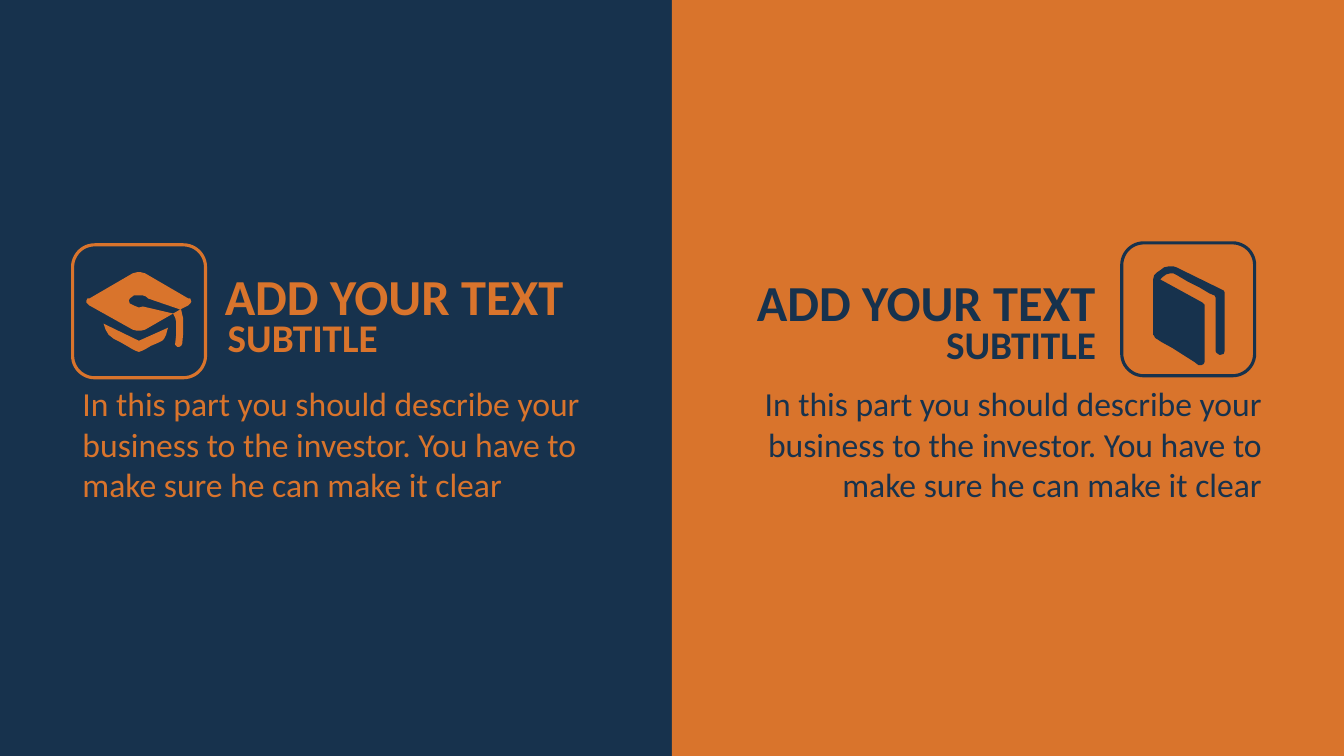
from dataclasses import dataclass

from pptx import Presentation
from pptx.dml.color import RGBColor
from pptx.enum.shapes import MSO_SHAPE
from pptx.enum.text import MSO_ANCHOR, MSO_AUTO_SIZE, PP_ALIGN
from pptx.util import Cm, Pt

RECT, ROUND_RECT = MSO_SHAPE.RECTANGLE, MSO_SHAPE.ROUNDED_RECTANGLE
LEFT, RIGHT = PP_ALIGN.LEFT, PP_ALIGN.RIGHT
TOP, GROW = MSO_ANCHOR.TOP, MSO_AUTO_SIZE.SHAPE_TO_FIT_TEXT

SLIDE_W, SLIDE_H = 33.87, 19.05
BADGE_SIZE = 3.35
ICON_UNIT = Cm(0.0254)  # one step of the icon grid

HEADING, SUBTITLE = "ADD YOUR TEXT", "SUBTITLE"
BODY = ("In this part you should describe your business to the investor. "
        "You have to make sure he can make it clear")

# Icon outlines: one list of grid points per contour
CAP = [
    # Cap band
    [(17, 51), (52, 68), (81, 55), (80, 58), (79, 62), (77, 66), (75, 68),
     (71, 70), (64, 73), (59, 76), (55, 78), (52, 79), (49, 78), (45, 76),
     (40, 73), (33, 69), (27, 66), (22, 62), (19, 57)],
    # Tassel
    [(93, 37), (94, 37), (95, 42), (96, 46), (96, 60), (95, 71), (94, 73),
     (92, 74), (90, 74), (88, 72), (88, 71), (89, 62), (89, 49), (88, 45),
     (86, 41)],
    # Board
    [(54, 0), (58, 1), (101, 26), (103, 26), (104, 29), (103, 31), (101, 33),
     (93, 37), (61, 26), (59, 24), (56, 23), (47, 23), (43, 26), (42, 28),
     (43, 31), (47, 33), (52, 35), (56, 34), (86, 41), (58, 57), (54, 58),
     (50, 58), (46, 57), (3, 33), (1, 31), (0, 30), (0, 28), (1, 26),
     (3, 26), (46, 1), (50, 0)],
]
BOOK = [
    [(20, 0), (23, 1), (70, 24), (71, 26), (71, 84), (70, 87), (66, 88),
     (63, 86), (62, 84), (62, 31), (61, 29), (56, 27), (46, 21), (34, 15),
     (24, 9), (20, 7), (17, 7), (13, 8), (9, 11), (7, 13), (49, 36),
     (51, 38), (51, 95), (50, 97), (48, 98), (45, 98), (41, 95), (30, 88),
     (19, 81), (8, 75), (2, 71), (1, 69), (0, 68), (0, 13), (1, 9),
     (4, 6), (7, 4), (11, 1), (16, 0)],
]


@dataclass(frozen=True)
class Theme:
    navy: RGBColor = RGBColor(0x17, 0x32, 0x4D)
    orange: RGBColor = RGBColor(0xD9, 0x74, 0x2C)
    font: str = "Calibri"
    heading: int = 36
    subtitle: int = 28
    body: int = 24
    outline: float = 2.25


class SlideBuilder:
    def __init__(self, slide, theme):
        self.s = slide
        self.theme = theme

    def panel(self, x, w, color):
        sp = self.s.shapes.add_shape(RECT, Cm(x), Cm(0), Cm(w), Cm(SLIDE_H))
        sp.shadow.inherit = False
        sp.fill.solid()
        sp.fill.fore_color.rgb = color
        sp.line.fill.background()

    def badge(self, x, y, color):
        sp = self.s.shapes.add_shape(ROUND_RECT, Cm(x), Cm(y),
                                     Cm(BADGE_SIZE), Cm(BADGE_SIZE))
        sp.shadow.inherit = False
        sp.fill.background()
        sp.line.color.rgb = color
        sp.line.width = Pt(self.theme.outline)

    def icon(self, x, y, contours, color):
        builder = self.s.shapes.build_freeform(*contours[0][0], scale=ICON_UNIT)
        for i, points in enumerate(contours):
            if i:
                builder.move_to(*points[0])
            builder.add_line_segments(points[1:], close=True)
        sp = builder.convert_to_shape(Cm(x), Cm(y))
        sp.shadow.inherit = False
        sp.fill.solid()
        sp.fill.fore_color.rgb = color
        sp.line.fill.background()

    def text(self, box, text, size, color, align, bold=False):
        sp = self.s.shapes.add_textbox(*map(Cm, box))
        self.format_text(sp, text, size, color, align, bold)

    def title(self, box, text, size, color, align):
        sp = self.s.shapes.title
        sp.left, sp.top, sp.width, sp.height = map(Cm, box)
        self.s.shapes._spTree.append(sp._element)  # bring in front of the panels
        self.format_text(sp, text, size, color, align, True)

    def format_text(self, sp, text, size, color, align, bold):
        tf = sp.text_frame
        tf.text = text
        tf.word_wrap = True
        tf.auto_size = GROW
        tf.vertical_anchor = TOP
        p = tf.paragraphs[0]
        p.alignment = align
        font = p.runs[0].font
        font.name = self.theme.font
        font.size = Pt(size)
        font.bold = bold
        font.color.rgb = color


def main():
    prs = Presentation()
    prs.slide_width, prs.slide_height = Cm(SLIDE_W), Cm(SLIDE_H)
    theme = Theme()
    s = SlideBuilder(prs.slides.add_slide(prs.slide_layouts[5]), theme)

    # Two-colour background
    half = SLIDE_W / 2
    s.panel(0, half, theme.navy)
    s.panel(half, half, theme.orange)

    # Left half
    s.text((1.83, 9.53, 13.18, 3.33), BODY, theme.body, theme.orange, LEFT)
    s.badge(1.83, 6.17, theme.orange)
    s.icon(2.18, 6.86, CAP, theme.orange)
    s.title((5.41, 6.55, 10.67, 1.8), HEADING, theme.heading, theme.orange, LEFT)
    s.text((5.49, 7.77, 9.63, 1.45), SUBTITLE, theme.subtitle, theme.orange,
           LEFT, bold=True)

    # Right half
    s.text((18.87, 9.53, 13.18, 3.33), BODY, theme.body, theme.navy, RIGHT)
    s.text((17.22, 6.71, 10.64, 1.8), HEADING, theme.heading, theme.navy,
           RIGHT, bold=True)
    s.text((18.24, 7.95, 9.63, 1.45), SUBTITLE, theme.subtitle, theme.navy,
           RIGHT, bold=True)
    s.badge(28.27, 6.12, theme.navy)
    s.icon(29.06, 6.71, BOOK, theme.navy)

    prs.save("out.pptx")


if __name__ == "__main__":
    main()
